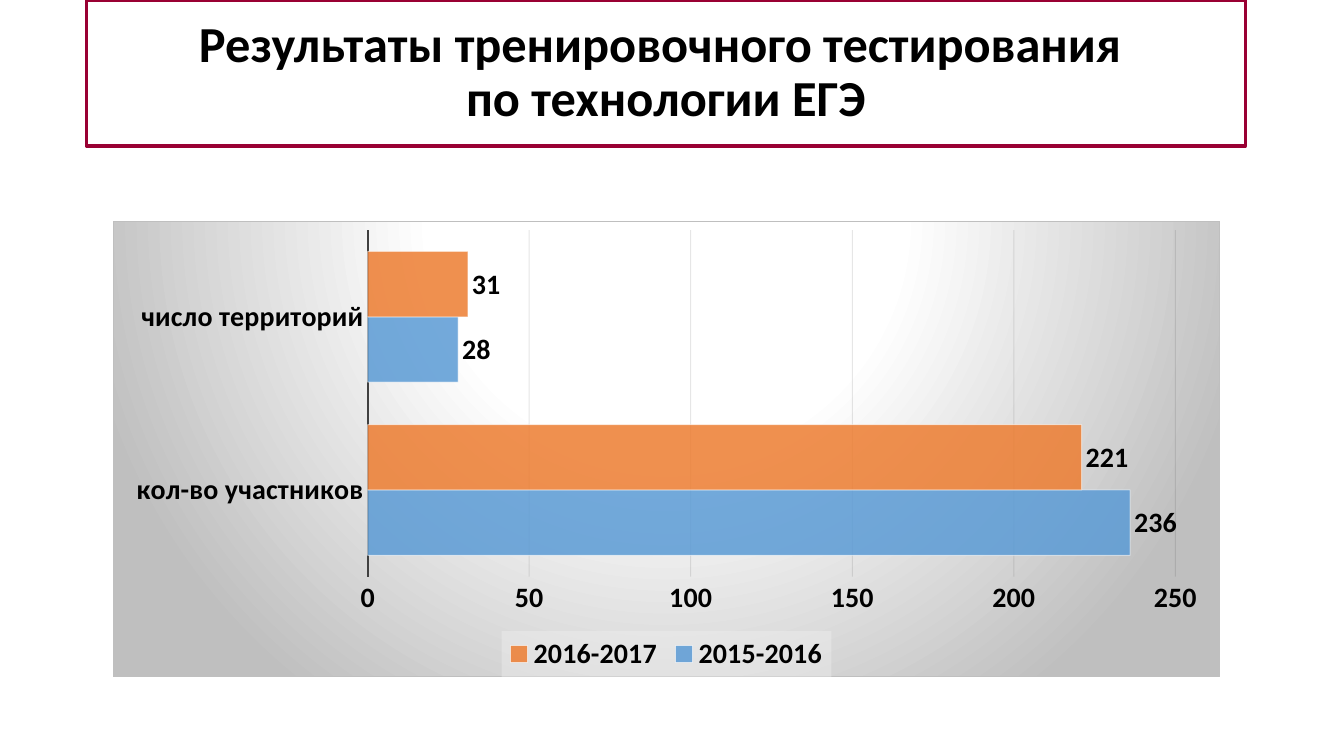
"""Builds a slide with a framed title and a clustered bar chart of test results."""
from pptx import Presentation
from pptx.chart.data import CategoryChartData
from pptx.dml.color import RGBColor
from pptx.enum.chart import XL_CHART_TYPE, XL_LABEL_POSITION, XL_LEGEND_POSITION, XL_TICK_MARK
from pptx.enum.shapes import MSO_SHAPE
from pptx.enum.text import MSO_ANCHOR, PP_ALIGN
from pptx.oxml import parse_xml
from pptx.oxml.ns import nsdecls, qn
from pptx.util import Cm, Pt

TITLE = "Результаты тренировочного тестирования \vпо технологии ЕГЭ"
GROUPS = ["кол-во участников", "число территорий"]
YEARS = {"2015-2016": (236, 28), "2016-2017": (221, 31)}
PAGE = Cm(33.87), Cm(19.05)
FRAME = Cm(2.18), Cm(0), Cm(29.21), Cm(3.68)
PLOT = Cm(2.84), Cm(5.56), Cm(27.91), Cm(11.51)
INNER = {"x": 0.23, "y": 0.02, "w": 0.73, "h": 0.76}
THEME = {
    "font": "Calibri", "head": 36, "body": 20, "text": "000000",
    "frame": "990033", "axis": "404040", "grid": "0D0D0D", "edge": "FFFFFF",
    "bars": ["5B9BD5", "ED7D31"], "key": "F2F2F2", "rim": "BFBFBF",
    "fade": [(0, "FFFFFF"), (39, "FFFFFF"), (100, "BFBFBF")],
}
ALPHA = {"5B9BD5": 85, "ED7D31": 85, "FFFFFF": 50, "0D0D0D": 10}
RECT = MSO_SHAPE.RECTANGLE
BAR = XL_CHART_TYPE.BAR_CLUSTERED
END = XL_LABEL_POSITION.OUTSIDE_END
BOTTOM = XL_LEGEND_POSITION.BOTTOM
NONE = XL_TICK_MARK.NONE
MIDDLE = MSO_ANCHOR.MIDDLE
CENTER = PP_ALIGN.CENTER


def put(item, vals):
    for name, val in vals.items():
        setattr(item, name, val)


def ink(font, size):
    put(font, {"name": THEME["font"], "size": Pt(THEME[size]), "bold": True})
    font.color.rgb = RGBColor.from_string(THEME["text"])


def rule(line, color, width):
    line.color.rgb = RGBColor.from_string(color)
    line.width = Pt(width)


def add_title(slide):
    box = slide.shapes.add_shape(RECT, *FRAME)
    box.shadow.inherit = False
    box.fill.background()
    rule(box.line, THEME["frame"], 2.25)
    put(box.text_frame, {"word_wrap": True, "vertical_anchor": MIDDLE, "text": TITLE})
    para = box.text_frame.paragraphs[0]
    put(para, {"alignment": CENTER, "line_spacing": 0.9})
    for run in para.runs:
        ink(run.font, "head")


def add_bars(slide):
    data = CategoryChartData()
    data.categories = GROUPS
    for year, vals in YEARS.items():
        data.add_series(year, vals)
    chart = slide.shapes.add_chart(BAR, *PLOT, data).chart
    put(chart, {"has_title": False, "has_legend": True})
    ink(chart.font, "body")
    put(chart.legend, {"position": BOTTOM, "include_in_layout": False})
    ink(chart.legend.font, "body")
    cats, scale = chart.category_axis, chart.value_axis
    for axis in (cats, scale):
        put(axis, {"major_tick_mark": NONE, "minor_tick_mark": NONE})
        ink(axis.tick_labels.font, "body")
    rule(cats.format.line, THEME["axis"], 1.5)
    put(scale, {"minimum_scale": 0, "maximum_scale": 250, "major_unit": 50})
    scale.format.line.fill.background()
    rule(scale.major_gridlines.format.line, THEME["grid"], 0.75)
    plot = chart.plots[0]
    put(plot, {"gap_width": 65, "overlap": 0, "vary_by_categories": False})
    for series, color in zip(plot.series, THEME["bars"]):
        series.format.fill.solid()
        series.format.fill.fore_color.rgb = RGBColor.from_string(color)
        rule(series.format.line, THEME["edge"], 0.75)
        put(series.data_labels, {"show_value": True, "position": END})
        ink(series.data_labels.font, "body")
    return chart


def tint(color, alpha):
    return f'<a:srgbClr val="{color}"><a:alpha val="{alpha * 1000}"/></a:srgbClr>'


def style_back(chart):
    root, ns = chart.element, nsdecls("c", "a")
    for clr in list(root.iter(qn("a:srgbClr"))):
        if clr.get("val") in ALPHA:
            fresh = parse_xml(tint(clr.get("val"), ALPHA[clr.get("val")])
                              .replace("<a:srgbClr", f"<a:srgbClr {ns}", 1))
            clr.getparent().replace(clr, fresh)
    stops = "".join(f'<a:gs pos="{pos * 1000}">{tint(color, 100)}</a:gs>'
                    for pos, color in THEME["fade"])
    back = (f'<c:spPr {ns}><a:gradFill><a:gsLst>{stops}</a:gsLst><a:path path="circle">'
            '<a:fillToRect l="50000" t="-80000" r="50000" b="180000"/></a:path></a:gradFill>'
            f'<a:ln w="9525"><a:solidFill>{tint(THEME["rim"], 100)}</a:solidFill></a:ln></c:spPr>')
    root.find(qn("c:chart")).addnext(parse_xml(back))
    key = f'<c:spPr {ns}><a:solidFill>{tint(THEME["key"], 39)}</a:solidFill></c:spPr>'
    next(root.iter(qn("c:legend"))).find(qn("c:overlay")).addnext(parse_xml(key))
    area = next(root.iter(qn("c:plotArea")))
    for old in area.findall(qn("c:layout")):
        area.remove(old)
    modes = '<c:xMode val="edge"/><c:yMode val="edge"/>'
    sides = "".join(f'<c:{side} val="{val}"/>' for side, val in INNER.items())
    area.insert(0, parse_xml(f'<c:layout {ns}><c:manualLayout><c:layoutTarget val="inner"/>'
                             f'{modes}{sides}</c:manualLayout></c:layout>'))


def main():
    deck = Presentation()
    put(deck, dict(zip(("slide_width", "slide_height"), PAGE)))
    slide = deck.slides.add_slide(deck.slide_layouts[6])
    add_title(slide)
    style_back(add_bars(slide))
    deck.save("out.pptx")


if __name__ == "__main__":
    main()
